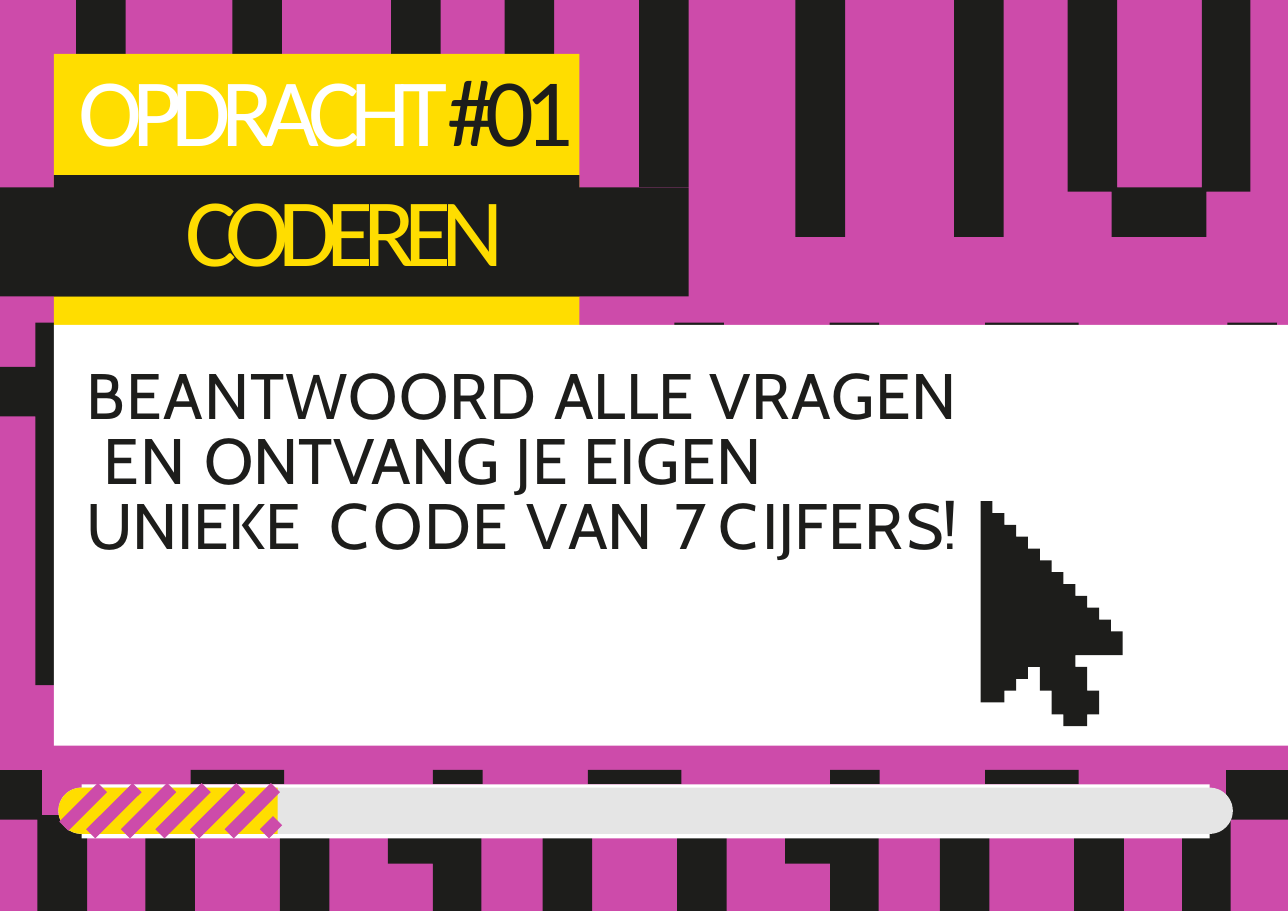
from math import cos, pi, sin

from lxml import etree
from pptx import Presentation
from pptx.dml.color import RGBColor
from pptx.enum.shapes import MSO_CONNECTOR, MSO_SHAPE
from pptx.enum.text import MSO_ANCHOR, PP_ALIGN
from pptx.oxml.ns import qn
from pptx.util import Inches, Pt

RECT, PILL = MSO_SHAPE.RECTANGLE, MSO_SHAPE.ROUNDED_RECTANGLE
LINE = MSO_CONNECTOR.STRAIGHT
TOP, LEFT, MID = MSO_ANCHOR.TOP, PP_ALIGN.LEFT, PP_ALIGN.CENTER
COLOR = {"pink": "CD4BAA", "dark": "1D1D1B", "gold": "FFDD00",
         "white": "FFFFFF", "grey": "E5E5E5"}
COLS, ROWS = 116.9, 82.7
BAR, WIDE, CYCLE = 4.5, 8.5, 36.05


def grid(n):
    return Inches(n / 10)


def tone(name):
    return RGBColor.from_string(COLOR[name])


def paint(shape, color):
    shape.shadow.inherit = False
    shape.fill.solid()
    shape.fill.fore_color.rgb = tone(color)
    shape.line.fill.background()
    return shape


def box(slide, x, y, w, h, color, kind=RECT):
    shape = slide.shapes.add_shape(kind, grid(x), grid(y), grid(w), grid(h))
    return paint(shape, color)


def outline(slide, points, color):
    spots = [(grid(x), grid(y)) for x, y in points]
    form = slide.shapes.build_freeform(*spots[0], scale=1.0)
    form.add_line_segments(spots[1:], close=True)
    return paint(form.convert_to_shape(), color)


def write(shape, runs, font, size, lead, align=LEFT, indent=0, tail=0, above=0, inset=0):
    frame = shape.text_frame
    frame.word_wrap = True
    frame.vertical_anchor = TOP
    frame.margin_left = frame.margin_right = frame.margin_bottom = 0
    frame.margin_top = grid(inset)
    para = frame.paragraphs[0]
    para.alignment = align
    para.line_spacing = Pt(lead)
    para.space_before = Pt(above)
    para.font.name = font
    para.font.size = Pt(size)
    props = para._p.get_or_add_pPr()
    props.set("marL", str(grid(indent)))
    props.set("marR", str(grid(tail)))
    props.set("indent", "0")
    for text, color, space in runs:
        if text == "\n":
            para.add_line_break()
            continue
        run = para.add_run()
        run.text = text
        run.font.color.rgb = tone(color)
        run.font._element.set("spc", str(round(space * 100)))


def stripe(slide, x1, y1, x2, y2):
    line = slide.shapes.add_connector(LINE, grid(x1), grid(y1), grid(x2), grid(y2))
    line.line.color.rgb = tone("pink")
    line.line.width = Pt(8.41)
    etree.SubElement(line._element.spPr, qn("a:effectLst"))


def maze(slide):
    for x, h in ((6.9, 4.9), (21.1, 4.9), (35.5, 4.9), (45.8, 4.9), (58, 17),
                 (72.2, 21.5), (86.6, 21.5)):
        box(slide, x, 0, BAR, h, "dark")
    outline(slide, [(96.9, 0), (101.4, 0), (101.4, 17), (109.1, 17), (109.1, 0),
                    (113.5, 0), (113.5, 17.4), (109.5, 17.4), (109.5, 21.5),
                    (100.9, 21.5), (100.9, 17.4), (96.9, 17.4)], "dark")
    for x, w in ((61.2, BAR), (75.3, BAR), (89.4, WIDE), (111.4, BAR)):
        box(slide, x, 29.3, w, 0.3, "dark")
    outline(slide, [(3.2, 29.3), (4.9, 29.3), (4.9, 62.2), (3.2, 62.2),
                    (3.2, 37.8), (0, 37.8), (0, 33.3), (3.2, 33.3)], "dark")
    for turn in range(3):
        x = turn * CYCLE
        for start in (13.2, 25.4):
            box(slide, x + start, 76, BAR, ROWS - 76, "dark")
        box(slide, x + 17.3, 69.9, WIDE, 1.3, "dark")
        if turn < 2:
            x += 35.2
            box(slide, x + 4.1, 69.9, BAR, 1.3, "dark")
            outline(slide, [(x, 76), (x + WIDE, 76), (x + WIDE, ROWS),
                            (x + 4.1, ROWS), (x + 4.1, 78.4), (x, 78.4)], "dark")
    outline(slide, [(0, 69.9), (3.8, 69.9), (3.8, 74), (7.9, 74), (7.9, ROWS),
                    (3.4, ROWS), (3.4, 74.4), (0, 74.4)], "dark")
    outline(slide, [(111.3, 69.9), (COLS, 69.9), (COLS, 74.4), (111.7, 74.4),
                    (111.7, ROWS), (107.3, ROWS), (107.3, 74.4), (109.8, 74.4),
                    (109.8, 74), (111.3, 74)], "dark")


def heads(slide):
    title = box(slide, 4.9, 4.9, 47.7, 24.6, "gold")
    write(title, [("OPDRACHT", "white", -6.5), ("#01", "dark", -6.5)],
          "Calibri", 63, 73.2, indent=2.2)
    box(slide, 4.9, 15.9, 47.7, 11, "dark")
    label = box(slide, 0, 17, 62.5, 9.9, "dark")
    write(label, [("CODEREN", "gold", -7)], "Calibri", 63, 64.6, align=MID)


def panel(slide):
    box(slide, 4.9, 29.5, COLS - 4.9, 38.2, "white")
    words = [("BEANTWOORD ", 0.8), ("ALLE ", 0.2), ("VRAGEN", 0.6), ("\n", 0),
             (" EN ", 1.2), ("ONTVANG ", 0.1), ("JE ", 0.5), ("EIGEN ", 0.4),
             ("UNIEKE  ", -0.3), ("C", 3.2), ("O", 1.2), ("D", 0.8), ("E ", 1.4),
             ("V", -3), ("A", -0.6), ("N ", 2.3), ("7 ", -1.9), ("C", 3),
             ("IJ", -0.5), ("F", 0.2), ("E", 0.1), ("R", 1.9), ("S!", -0.4)]
    note = slide.shapes.add_textbox(grid(7.8), grid(32.1), grid(79.4), grid(19.1))
    write(note, [(text, "dark", space) for text, space in words], "Cabin", 42, 42.4,
          indent=0.1, above=9.1, inset=1.3)


def arrow(slide):
    stairs = [spot for n in range(12) for spot in ((n, n), (n + 1, n))]
    base = [(12, 13), (8, 13), (8, 14), (9, 14), (9, 16), (10, 16), (10, 18),
            (9, 18), (9, 19), (7, 19), (7, 18), (6, 18), (6, 16), (5, 16), (5, 14),
            (4, 14), (4, 15), (3, 15), (3, 16), (2, 16), (2, 17), (0, 17)]
    cell = 1.075
    outline(slide, [(89 + x * cell, 45.5 + y * cell) for x, y in stairs + base], "dark")


def meter(slide):
    box(slide, 7.4, 71.2, 102.4, 4.9, "white")
    box(slide, 5.3, 71.5, 106.6, 4.2, "grey", PILL).adjustments[0] = 0.5
    turns = [pi / 2 + n * pi / 16 for n in range(17)]
    curve = [(7.4 + 2.1 * cos(a), 73.6 - 2.1 * sin(a)) for a in turns]
    outline(slide, [(25.2, 71.5)] + curve + [(25.2, 75.7)], "gold")
    for n in range(6):
        x, fall = 9.3 + n * 3.14, 4.2 if n else 3.5
        stripe(slide, x, 71.5, x - fall, 71.5 + fall)
    stripe(slide, 25.2, 74.5, 24, 75.7)


def main():
    deck = Presentation()
    deck.slide_width, deck.slide_height = grid(COLS), grid(ROWS)
    slide = deck.slides.add_slide(deck.slide_layouts[6])
    slide.background.fill.solid()
    slide.background.fill.fore_color.rgb = tone("pink")
    for draw in (maze, heads, panel, arrow, meter):
        draw(slide)
    deck.save("out.pptx")


if __name__ == "__main__":
    main()
